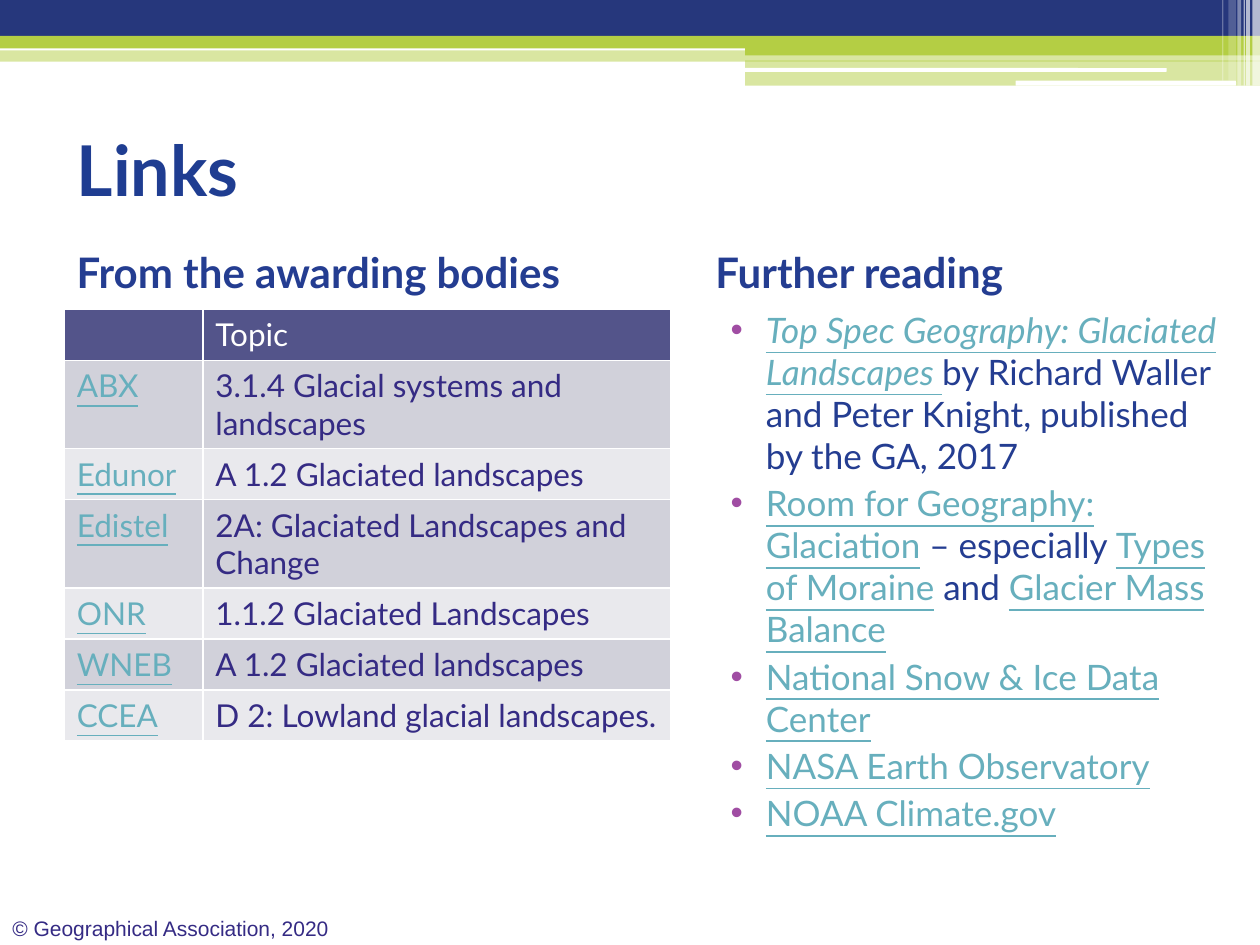
from lxml import etree
from pptx import Presentation
from pptx.dml.color import RGBColor
from pptx.enum.shapes import MSO_SHAPE
from pptx.enum.text import MSO_ANCHOR, MSO_AUTO_SIZE, PP_ALIGN
from pptx.oxml.ns import qn
from pptx.util import Inches, Pt

RECTANGLE = MSO_SHAPE.RECTANGLE
ROUNDED = MSO_SHAPE.ROUNDED_RECTANGLE
TOP, MIDDLE, BOTTOM = MSO_ANCHOR.TOP, MSO_ANCHOR.MIDDLE, MSO_ANCHOR.BOTTOM
LEFT = PP_ALIGN.LEFT
NO_AUTOFIT = MSO_AUTO_SIZE.NONE
TITLE_ONLY = 5
COLUMNS, ROWS = 100, 75

COLORS = {
    "navy": "26377C", "lime": "B4CE44", "white": "FFFFFF",
    "title": "1F3D91", "body": "243D91", "ink": "352B84",
    "link": "67AFBD", "bullet": "A04DA3",
    "header": "53548A", "dark band": "D1D1DA", "light band": "E9E9ED",
}

BANDS = [
    (RECTANGLE, (0, 4, 100, 0.9), "lime", 50),
    (RECTANGLE, (0, 0, 100, 3.4), "navy", 100),
    (RECTANGLE, (0, 2.85, 100, 1), "lime", 100),
    (RECTANGLE, (59.15, 3.4, 40.85, 1), "lime", 100),
    (RECTANGLE, (59.15, 4.8, 40.85, 2), "lime", 50),
    (ROUNDED, (59.1, 5.4, 33.5, 0.3), "white", 100),
    (ROUNDED, (80.6, 6.4, 17.5, 0.4), "white", 100),
]
STRIPES = [
    (99.4, 0.6, 6.8, 65), (98.9, 0.3, 6.8, 65), (98.7, 0.1, 6.8, 60),
    (98.2, 0.3, 6.8, 40), (97.5, 0.6, 6.4, 20), (97, 0.1, 6.4, 30),
]

TOPICS = [
    ("", "Topic"),
    ("ABX", "3.1.4 Glacial systems and landscapes"),
    ("Edunor", "A 1.2 Glaciated landscapes"),
    ("Edistel", "2A: Glaciated Landscapes and Change"),
    ("ONR", "1.1.2 Glaciated Landscapes"),
    ("WNEB", "A 1.2 Glaciated landscapes"),
    ("CCEA", "D 2: Lowland glacial landscapes."),
]

LINK = {"color": "link", "underline": True}
READING = [
    [("Top Spec Geography: Glaciated Landscapes ", {**LINK, "italic": True}),
     ("by Richard Waller and Peter Knight, published by the GA, 2017", {})],
    [("Room for Geography: Glaciation", LINK), (" – especially ", {}),
     ("Types of Moraine", LINK), (" and ", {}), ("Glacier Mass Balance", LINK)],
    [("National Snow & Ice Data Center", LINK)],
    [("NASA Earth Observatory", LINK)],
    [("NOAA Climate.gov", LINK)],
]


class SlideBuilder:
    """Draws styled elements on one slide, placed on a 100 by 75 grid."""

    def __init__(self, presentation):
        self.width = presentation.slide_width
        self.height = presentation.slide_height
        self.slide = presentation.slides.add_slide(
            presentation.slide_layouts[TITLE_ONLY])

    def across(self, columns):
        return round(self.width * columns / COLUMNS)

    def down(self, rows):
        return round(self.height * rows / ROWS)

    def box(self, left, top, width, height):
        return (self.across(left), self.down(top),
                self.across(width), self.down(height))

    def paint(self, fill, color):
        fill.solid()
        fill.fore_color.rgb = RGBColor.from_string(COLORS[color])

    def band(self, kind, place, color, opacity=100):
        shape = self.slide.shapes.add_shape(kind, *self.box(*place))
        shape.shadow.inherit = False
        shape.line.fill.background()
        self.paint(shape.fill, color)
        if opacity < 100:
            tint = shape.fill._xPr.find(".//" + qn("a:srgbClr"))
            etree.SubElement(tint, qn("a:alpha"), val=str(opacity * 1000))

    def run(self, paragraph, text, size, color, font="Lato", bold=False,
            italic=False, underline=False):
        run = paragraph.add_run()
        run.text = text
        run.font.name, run.font.size = font, Pt(size)
        run.font.bold, run.font.italic = bold, italic
        run.font.underline = underline
        run.font.color.rgb = RGBColor.from_string(COLORS[color])

    def frame(self, shape, anchor):
        frame = shape.text_frame
        frame.word_wrap = True
        frame.auto_size = NO_AUTOFIT
        frame.vertical_anchor = anchor
        return frame

    def title(self, text, place):
        shape = self.slide.shapes.title
        shape.left, shape.top, shape.width, shape.height = self.box(*place)
        paragraph = self.frame(shape, MIDDLE).paragraphs[0]
        paragraph.alignment = LEFT
        self.run(paragraph, text, 40, "title", bold=True)

    def text(self, text, place, size, color, anchor=TOP, **style):
        shape = self.slide.shapes.add_textbox(*self.box(*place))
        paragraph = self.frame(shape, anchor).paragraphs[0]
        self.run(paragraph, text, size, color, **style)

    def bullets(self, items, place, size):
        shape = self.slide.shapes.add_textbox(*self.box(*place))
        frame = self.frame(shape, TOP)
        for index, runs in enumerate(items):
            paragraph = frame.add_paragraph() if index else frame.paragraphs[0]
            properties = paragraph._p.get_or_add_pPr()
            properties.set("marL", str(Inches(0.4)))
            properties.set("indent", str(Inches(-0.28)))
            tint = etree.SubElement(properties, qn("a:buClr"))
            etree.SubElement(tint, qn("a:srgbClr"), val=COLORS["bullet"])
            etree.SubElement(properties, qn("a:buFont"), typeface="Arial")
            etree.SubElement(properties, qn("a:buChar"), char="•")
            paragraph.space_before = Pt(3 if index else 0)
            for text, style in runs:
                self.run(paragraph, text, size, **{"color": "body", **style})

    def borders(self, cell):
        properties = cell._tc.get_or_add_tcPr()
        for index, side in enumerate(("lnL", "lnR", "lnT", "lnB")):
            line = etree.Element(qn("a:" + side), w=str(Pt(1)))
            fill = etree.SubElement(line, qn("a:solidFill"))
            etree.SubElement(fill, qn("a:srgbClr"), val=COLORS["white"])
            properties.insert(index, line)

    def table(self, rows, left, top, widths, row_height, size):
        place = self.box(left, top, sum(widths), row_height * len(rows))
        table = self.slide.shapes.add_table(
            len(rows), len(widths), *place).table
        for column, width in zip(table.columns, widths):
            column.width = self.across(width)
        for row, values in enumerate(rows):
            band = "dark band" if row % 2 else "light band"
            for column, text in enumerate(values):
                cell = table.cell(row, column)
                self.paint(cell.fill, band if row else "header")
                self.borders(cell)
                paragraph = cell.text_frame.paragraphs[0]
                if not text:
                    paragraph.font.size = Pt(size)
                elif row and column == 0:
                    self.run(paragraph, text, size, **LINK)
                else:
                    self.run(paragraph, text, size, "ink" if row else "white")


def main():
    presentation = Presentation()
    presentation.slide_width, presentation.slide_height = Inches(10), Inches(7.5)
    builder = SlideBuilder(presentation)
    for band in BANDS:
        builder.band(*band)
    for left, width, height, opacity in STRIPES:
        builder.band(RECTANGLE, (left, 0, width, height), "white", opacity)
    builder.text("© Geographical Association, 2020", (0, 72.15, 28.7, 3),
                 12, "ink", font="Arial")
    builder.title("Links", (5.1, 7.5, 90, 11.7))
    for heading, left in (("From the awarding bodies", 5.1),
                          ("Further reading", 55.8)):
        builder.text(heading, (left, 17.05, 44.2, 7), 24, "body", BOTTOM,
                     bold=True)
    builder.bullets(READING, (55.8, 24, 42.5, 32.3), 20)
    builder.table(TOPICS, 5.1, 24.55, (11, 37.1), 4.05, 18)
    presentation.save("out.pptx")


if __name__ == "__main__":
    main()
